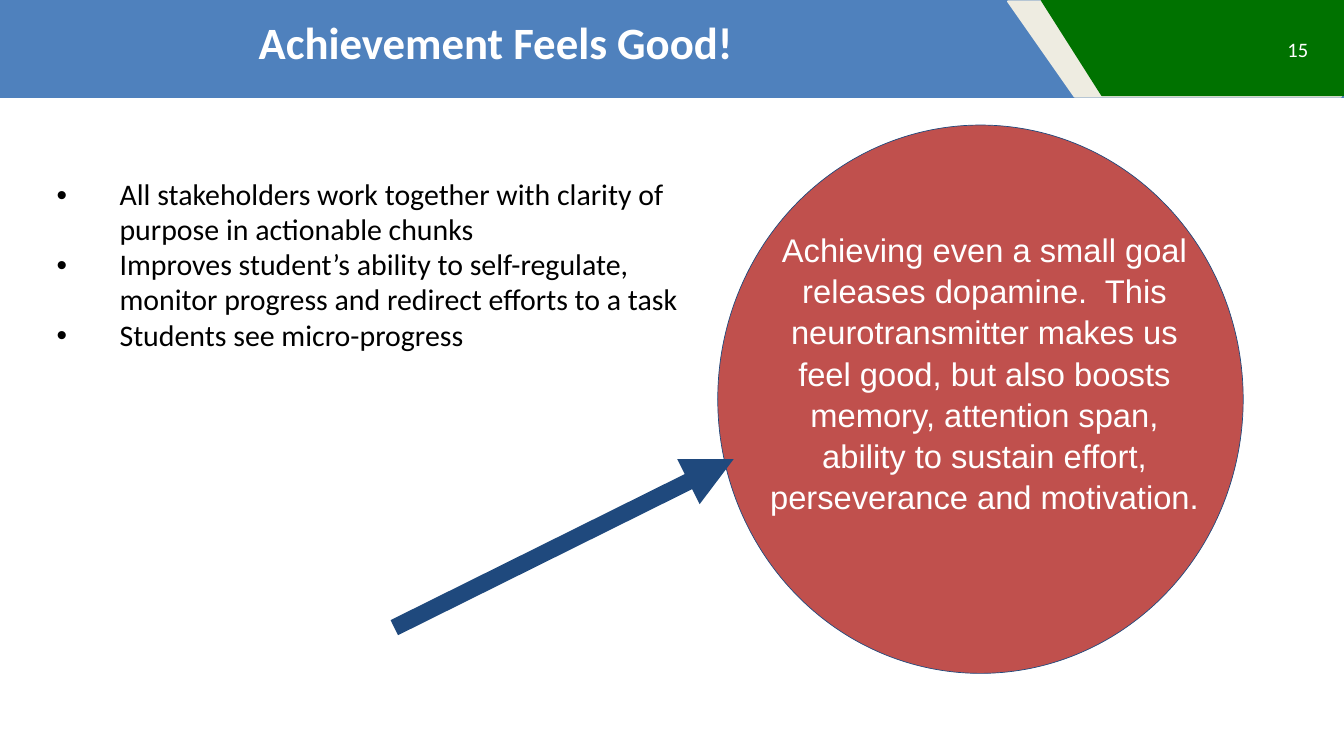
from dataclasses import dataclass

from lxml import etree
from pptx import Presentation
from pptx.dml.color import RGBColor
from pptx.enum.shapes import MSO_CONNECTOR, MSO_SHAPE
from pptx.enum.text import MSO_ANCHOR, PP_ALIGN
from pptx.oxml.ns import qn
from pptx.slide import Slide
from pptx.util import Pt

RECTANGLE = MSO_SHAPE.RECTANGLE
SLANTED = MSO_SHAPE.FLOWCHART_MANUAL_INPUT
CIRCLE = MSO_SHAPE.OVAL
STRAIGHT = MSO_CONNECTOR.STRAIGHT
TOP, MIDDLE = MSO_ANCHOR.TOP, MSO_ANCHOR.MIDDLE
LEFT, CENTER, RIGHT = PP_ALIGN.LEFT, PP_ALIGN.CENTER, PP_ALIGN.RIGHT

BLUE = RGBColor(0x4F, 0x81, 0xBD)
NAVY = RGBColor(0x1F, 0x49, 0x7D)
CREAM = RGBColor(0xEE, 0xEC, 0xE1)
GREEN = RGBColor(0x00, 0x72, 0x00)
RED = RGBColor(0xC0, 0x50, 0x4D)
WHITE = RGBColor(0xFF, 0xFF, 0xFF)
BLACK = RGBColor(0x00, 0x00, 0x00)

Box = tuple[float, float, float, float]


@dataclass(frozen=True)
class Panel:
    preset: MSO_SHAPE
    box: Box
    fill: RGBColor
    line: RGBColor | None = None
    line_width: float = 0
    rotation: float = 0


@dataclass(frozen=True)
class TextBlock:
    box: Box
    paragraphs: tuple[str, ...]
    font: dict
    align: PP_ALIGN = LEFT
    anchor: MSO_ANCHOR = TOP
    inset: tuple[float, float] = (14.4, 7.2)
    line_spacing: float = 1.0
    bullet_indent: tuple[float, float] | None = None


PANELS = (
    Panel(RECTANGLE, (0, 0, 1440, 105), BLUE),
    Panel(SLANTED, (1207.5, -126, 102, 357), CREAM, CREAM, 2, 270),
    Panel(SLANTED, (1227, -111, 102, 324), GREEN, GREEN, 2, 270),
    Panel(CIRCLE, (769, 134, 563, 587.5), RED, NAVY, 0.75),
)

TEXTS = (
    TextBlock(
        (-10, 0, 1093.5, 90), ("Achievement Feels Good! ",),
        {"name": "Calibri", "size": Pt(48), "bold": True}, CENTER, MIDDLE, (7.2, 3.6),
    ),
    TextBlock(
        (1344, 31, 72, 43), ("15",),
        {"name": "Calibri", "size": Pt(22)}, RIGHT, MIDDLE,
    ),
    TextBlock(
        (49, 183, 719, 377),
        (
            "All stakeholders work together with clarity of purpose in actionable chunks",
            "Improves student’s ability to self-regulate, monitor progress and redirect "
            "efforts to a task",
            "Students see micro-progress",
        ),
        {"name": "Calibri", "size": Pt(32)}, inset=(7.2, 7.2),
        line_spacing=0.98, bullet_indent=(72, -67.5),
    ),
    TextBlock(
        (806, 237, 498, 408),
        (
            "Achieving even a small goal releases dopamine.  This neurotransmitter makes us "
            "feel good, but also boosts memory, attention span, ability to sustain effort, "
            "perseverance and motivation.  ",
        ),
        {"name": "Arial", "size": Pt(35)}, CENTER, line_spacing=1.05,
    ),
)


def draw_panel(slide: Slide, panel: Panel) -> None:
    shape = slide.shapes.add_shape(panel.preset, *map(Pt, panel.box))
    shape.shadow.inherit = False
    shape.rotation = panel.rotation
    shape.fill.solid()
    shape.fill.fore_color.rgb = panel.fill
    if panel.line is None:
        shape.line.fill.background()
    else:
        shape.line.color.rgb = panel.line
        shape.line.width = Pt(panel.line_width)


def add_bullet(paragraph, left: float, hanging: float) -> None:
    properties = paragraph._p.get_or_add_pPr()
    properties.set("marL", str(Pt(left)))
    properties.set("indent", str(Pt(hanging)))
    etree.SubElement(properties, qn("a:buFont")).set("typeface", "Arial")
    etree.SubElement(properties, qn("a:buChar")).set("char", "•")


def draw_text(slide: Slide, block: TextBlock, color: RGBColor) -> None:
    frame = slide.shapes.add_textbox(*map(Pt, block.box)).text_frame
    side, end = map(Pt, block.inset)
    layout = {
        "word_wrap": True, "vertical_anchor": block.anchor,
        "margin_left": side, "margin_right": side,
        "margin_top": end, "margin_bottom": end,
    }
    for attribute, value in layout.items():
        setattr(frame, attribute, value)
    for index, wording in enumerate(block.paragraphs):
        paragraph = frame.add_paragraph() if index else frame.paragraphs[0]
        paragraph.alignment = block.align
        paragraph.line_spacing = block.line_spacing
        if block.bullet_indent:
            add_bullet(paragraph, *block.bullet_indent)
        run = paragraph.add_run()
        run.text = wording
        for attribute, value in block.font.items():
            setattr(run.font, attribute, value)
        run.font.color.rgb = color


def draw_arrow(slide: Slide, ends: Box, color: RGBColor, width: float) -> None:
    arrow = slide.shapes.add_connector(STRAIGHT, *map(Pt, ends))
    arrow.line.color.rgb = color
    arrow.line.width = Pt(width)
    etree.SubElement(arrow.line._get_or_add_ln(), qn("a:tailEnd")).set("type", "triangle")
    etree.SubElement(arrow._element.spPr, qn("a:effectLst"))


def main() -> None:
    deck = Presentation()
    deck.slide_width, deck.slide_height = Pt(1440), Pt(810)
    slide = deck.slides.add_slide(deck.slide_layouts[6])
    for panel in PANELS:
        draw_panel(slide, panel)
    for block in TEXTS:
        draw_text(slide, block, BLACK if block.bullet_indent else WHITE)
    draw_arrow(slide, (422.5, 672.5, 786, 492), NAVY, 18)
    deck.save("out.pptx")


if __name__ == "__main__":
    main()
